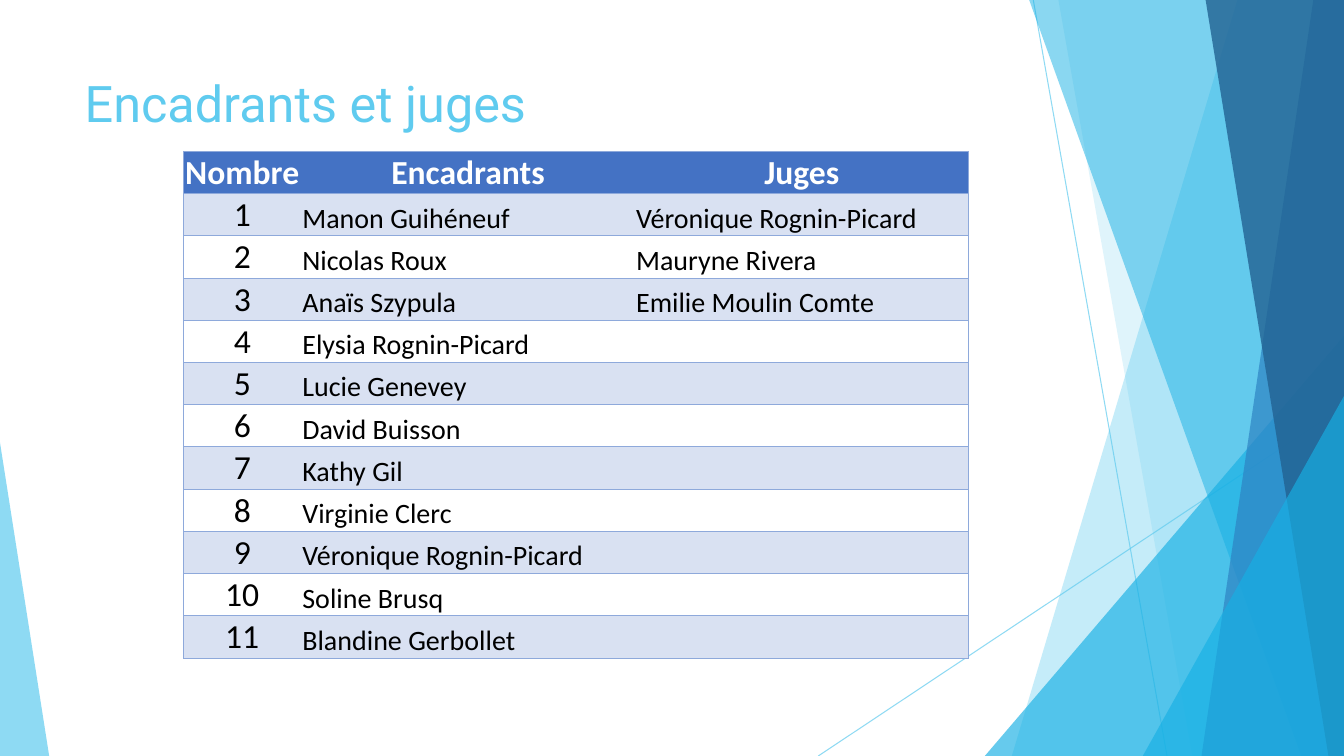
from lxml.etree import SubElement
from pptx import Presentation
from pptx.dml.color import RGBColor
from pptx.enum.shapes import MSO_CONNECTOR, MSO_SHAPE
from pptx.enum.text import MSO_ANCHOR, MSO_AUTO_SIZE, PP_ALIGN
from pptx.oxml.ns import qn
from pptx.util import Cm, Pt

# Content
TITLE = "Encadrants et juges"
HEADERS = ["Nombre", "Encadrants", "Juges"]
SUPERVISORS = [
    "Manon Guihéneuf", "Nicolas Roux", "Anaïs Szypula", "Elysia Rognin-Picard",
    "Lucie Genevey", "David Buisson", "Kathy Gil", "Virginie Clerc",
    "Véronique Rognin-Picard", "Soline Brusq", "Blandine Gerbollet",
]
JUDGES = ["Véronique Rognin-Picard", "Mauryne Rivera", "Emilie Moulin Comte"]

# Layout, in centimetres
WIDTH, HEIGHT = 33.87, 19.05
TABLE_LEFT, TABLE_TOP, ROW_HEIGHT = 4.62, 3.81, 1.06
COLUMN_WIDTHS = [2.97, 8.41, 8.41]
SKY, CYAN, BLUE, NAVY = "5FCBEF", "17B0E4", "2E83C3", "226292"
HEADER_FILL, BAND_FILL, BORDER = "4472C4", "D9E1F2", "8EA9DB"

# Decoration from back to front; the last value is opacity in percent
RAYS = [(26.04, 0, 29.41, HEIGHT), (WIDTH, 10.24, 20.62, HEIGHT)]
DECORATION = [  # band: top x, bottom x; triangle: left, top, width, apex
    ("band", (31.19, 25.5), SKY, 36),
    ("band", (26.67, 30.05), SKY, 20),
    ("triangle", (24.82, 8.46, 9.05, 1), CYAN, 66),
    ("band", (25.93, 32.79), CYAN, 50),
    ("band", (33.1, 30.28), BLUE, 70),
    ("band", (30.38, 33.48), NAVY, 80),
    ("triangle", (28.8, 9.98, 5.07, 1), CYAN, 66),
    ("triangle", (0, 11.15, 1.24, 0), SKY, 70),
]


def color(value):
    return RGBColor.from_string(value)


def set_attributes(target, values):
    for name, value in values.items():
        setattr(target, name, value)


def set_opacity(element, percent):
    for tint in element.spPr.iter(qn("a:srgbClr")):
        SubElement(tint, qn("a:alpha"), val=str(percent * 1000))


def add_band(page, top_x, bottom_x):
    builder = page.shapes.build_freeform(Cm(top_x), Cm(-0.02))
    corners = [(WIDTH, -0.02), (WIDTH, HEIGHT), (bottom_x, HEIGHT)]
    builder.add_line_segments([(Cm(x), Cm(y)) for x, y in corners], close=True)
    return builder.convert_to_shape()


def add_triangle(page, left, top, width, apex):
    shape = page.shapes.add_shape(MSO_SHAPE.ISOSCELES_TRIANGLE, Cm(left), Cm(top),
                                  Cm(width), Cm(HEIGHT - top))
    shape.adjustments[0] = apex
    return shape


def add_decoration(page):
    for ends in RAYS:
        ray = page.shapes.add_connector(MSO_CONNECTOR.STRAIGHT, *map(Cm, ends))
        ray.line.color.rgb = color(SKY)
        ray.line.width = Pt(0.75)
        set_opacity(ray._element, 70)
        SubElement(ray._element.spPr, qn("a:effectLst"))
    makers = {"band": add_band, "triangle": add_triangle}
    for kind, geometry, fill, opacity in DECORATION:
        shape = makers[kind](page, *geometry)
        shape.shadow.inherit = False
        shape.fill.solid()
        shape.fill.fore_color.rgb = color(fill)
        shape.line.fill.background()
        set_opacity(shape._element, opacity)


def write(frame, text, align, size, font, tint, bold=False):
    para = frame.paragraphs[0]
    para.alignment = align
    span = para.add_run()
    span.text = text
    set_attributes(span.font, {"size": Pt(size), "name": font, "bold": bold})
    span.font.color.rgb = color(tint)


def add_borders(cell, sides):
    properties = cell._tc.get_or_add_tcPr()
    for side in "LRTB":
        line = SubElement(properties, qn(f"a:ln{side}"), w=str(Pt(0.5)))
        if side in sides:
            fill = SubElement(line, qn("a:solidFill"))
            SubElement(fill, qn("a:srgbClr"), val=BORDER)
        else:
            SubElement(line, qn("a:noFill"))


def format_cell(cell, row, column, text):
    margins = dict.fromkeys(["margin_left", "margin_right", "margin_top"], Cm(0.03))
    middle = column == 0
    anchor = MSO_ANCHOR.MIDDLE if middle else MSO_ANCHOR.BOTTOM
    set_attributes(cell, {**margins, "margin_bottom": 0, "vertical_anchor": anchor})
    add_borders(cell, ["LTB", "TB", "RTB"][column])
    if row % 2 or row == 0:
        cell.fill.solid()
        cell.fill.fore_color.rgb = color(BAND_FILL if row else HEADER_FILL)
    else:
        cell.fill.background()
    if text:
        centred = row == 0 or middle
        write(cell.text_frame, text, PP_ALIGN.CENTER if centred else PP_ALIGN.LEFT,
              24 if centred else 20, "Calibri", "000000" if row else "FFFFFF", row == 0)


def add_people_table(page):
    judges = JUDGES + [""] * (len(SUPERVISORS) - len(JUDGES))
    numbers = [str(number + 1) for number in range(len(SUPERVISORS))]
    rows = [HEADERS, *zip(numbers, SUPERVISORS, judges)]
    table = page.shapes.add_table(
        len(rows), len(HEADERS), Cm(TABLE_LEFT), Cm(TABLE_TOP),
        Cm(sum(COLUMN_WIDTHS)), Cm(ROW_HEIGHT * len(rows))).table
    set_attributes(table, {"first_row": False, "horz_banding": False})
    for column, width in enumerate(COLUMN_WIDTHS):
        table.columns[column].width = Cm(width)
    for row, texts in enumerate(rows):
        table.rows[row].height = Cm(ROW_HEIGHT)
        for column, text in enumerate(texts):
            format_cell(table.cell(row, column), row, column, text)


def main():
    deck = Presentation()
    set_attributes(deck, {"slide_width": Cm(WIDTH), "slide_height": Cm(HEIGHT)})
    page = deck.slides.add_slide(deck.slide_layouts[5])
    add_decoration(page)

    # Title
    title = page.shapes.title
    set_attributes(title, {"left": Cm(1.88), "top": Cm(1.7),
                           "width": Cm(23.88), "height": Cm(3.66)})
    set_attributes(title.text_frame, {"vertical_anchor": MSO_ANCHOR.TOP, "word_wrap": True,
                                      "auto_size": MSO_AUTO_SIZE.NONE})
    write(title.text_frame, TITLE, PP_ALIGN.LEFT, 36, "Roboto", SKY)

    add_people_table(page)
    deck.save("out.pptx")


if __name__ == "__main__":
    main()
